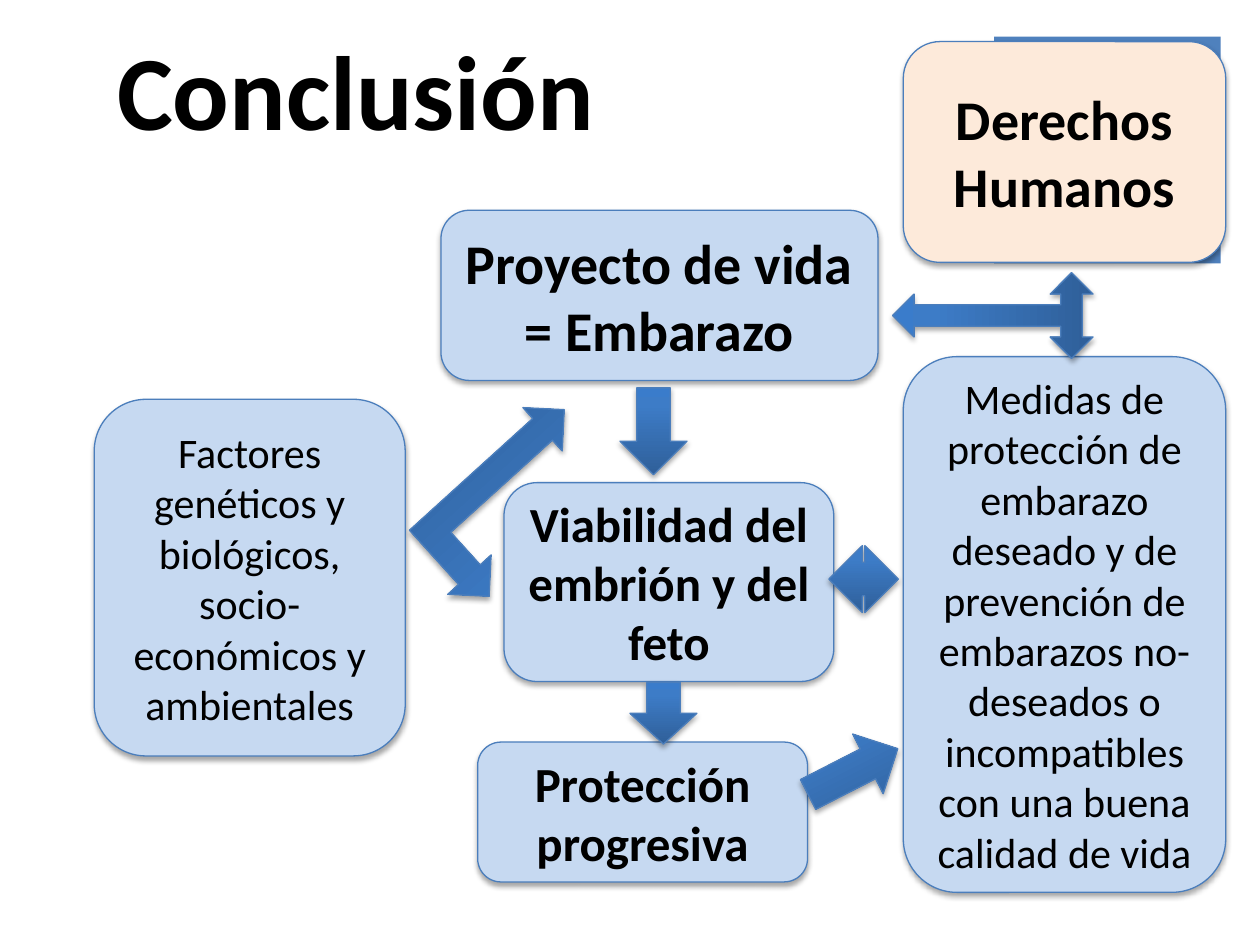
from copy import deepcopy

from lxml.etree import SubElement
from pptx import Presentation
from pptx.dml.color import RGBColor
from pptx.enum.shapes import MSO_SHAPE
from pptx.enum.text import MSO_ANCHOR, MSO_AUTO_SIZE, PP_ALIGN
from pptx.oxml.ns import qn
from pptx.util import Cm, Pt

COLORS = {
    "accent": "4F81BD",
    "outline": "4B7EBC",
    "topic": "C6D9F1",
    "rights": "FDEADA",
    "text": "000000",
}
ARROW_GRADIENT = [(0, "2F5F99"), (0.8, "3D7CC7"), (1, "3A7CCB")]


def rgb(name):
    return RGBColor.from_string(COLORS[name])


class ConclusionSlide:
    font_name = "Calibri"

    def __init__(self, presentation):
        self.slide = presentation.slides.add_slide(presentation.slide_layouts[5])

    def format_text(self, frame, text, size, bold, align):
        frame.text = text
        frame.word_wrap = True
        frame.auto_size = MSO_AUTO_SIZE.NONE
        frame.vertical_anchor = MSO_ANCHOR.MIDDLE
        paragraph = frame.paragraphs[0]
        paragraph.alignment = align
        font = paragraph.font
        font.name, font.size, font.bold = self.font_name, Pt(size), bold
        font.color.rgb = rgb("text")

    def title(self, text, left, top, width, height, size):
        title = self.slide.shapes.title
        title.left, title.top = Cm(left), Cm(top)
        title.width, title.height = Cm(width), Cm(height)
        self.format_text(title.text_frame, text, size, True, PP_ALIGN.LEFT)

    def shape(self, preset, left, top, width, height):
        shape = self.slide.shapes.add_shape(
            preset, Cm(left), Cm(top), Cm(width), Cm(height))
        shape.shadow.inherit = False
        return shape

    def corner_square(self, left, top, side):
        square = self.shape(MSO_SHAPE.RECTANGLE, left, top, side, side)
        square.fill.solid()
        square.fill.fore_color.rgb = rgb("accent")
        square.line.fill.background()

    def outline_and_shadow(self, shape):
        shape.line.color.rgb = rgb("outline")
        shape.line.width = Pt(0.75)
        effects = shape.element.spPr.find(qn("a:effectLst"))
        shadow = SubElement(effects, qn("a:outerShdw"), blurRad=str(Pt(3.1)),
                            dist=str(Pt(1.8)), dir="5400000", rotWithShape="0")
        color = SubElement(shadow, qn("a:srgbClr"), val=COLORS["text"])
        SubElement(color, qn("a:alpha"), val="35000")

    def box(self, text, left, top, width, height, size, bold=True, fill="topic"):
        box = self.shape(MSO_SHAPE.ROUNDED_RECTANGLE, left, top, width, height)
        box.fill.solid()
        box.fill.fore_color.rgb = rgb(fill)
        self.outline_and_shadow(box)
        self.format_text(box.text_frame, text, size, bold, PP_ALIGN.CENTER)

    def arrow(self, preset, left, top, width, height, rotation=0):
        arrow = self.shape(preset, left, top, width, height)
        arrow.rotation = rotation
        arrow.fill.gradient()
        arrow.fill.gradient_angle = 90
        stop_list = arrow.element.spPr.find(qn("a:gradFill")).find(qn("a:gsLst"))
        stop_list.append(deepcopy(stop_list[-1]))
        for stop, (position, color) in zip(arrow.fill.gradient_stops, ARROW_GRADIENT):
            stop.position = position
            stop.color.rgb = RGBColor.from_string(color)
        self.outline_and_shadow(arrow)


def main():
    presentation = Presentation()
    presentation.slide_width, presentation.slide_height = Cm(25.4), Cm(19.05)
    page = ConclusionSlide(presentation)

    page.corner_square(20.04, 0.74, 4.57)
    page.title("Conclusión", 2.11, 0.71, 18.85, 2.13, 60.3)

    page.box("Proyecto de vida = Embarazo", 8.89, 4.24, 8.81, 3.43, 32)
    page.box("Factores genéticos y biológicos, socio-económicos y ambientales",
             1.9, 8.05, 6.27, 7.19, 24, bold=False)
    page.box("Viabilidad del embrión y del feto", 10.16, 9.73, 6.65, 4.01, 28)
    page.box("Medidas de protección de embarazo deseado y de prevención de "
             "embarazos no-deseados o incompatibles con una buena calidad de vida",
             18.21, 7.19, 6.5, 10.8, 24, bold=False)
    page.box("Protección progresiva", 9.63, 14.96, 6.65, 2.82, 28)

    page.arrow(MSO_SHAPE.DOWN_ARROW, 12.5, 7.82, 1.35, 1.75)
    page.arrow(MSO_SHAPE.DOWN_ARROW, 12.7, 13.76, 1.35, 1.24)
    page.arrow(MSO_SHAPE.LEFT_UP_ARROW, 8.08, 8.94, 4.24, 2.36, 137.8)
    page.arrow(MSO_SHAPE.RIGHT_ARROW, 16.18, 14.88, 2.03, 1.35, 332.9)
    page.arrow(MSO_SHAPE.LEFT_RIGHT_ARROW, 16.71, 11, 1.4, 1.35)

    page.box("Derechos Humanos", 18.21, 0.84, 6.5, 4.45, 32, fill="rights")
    page.arrow(MSO_SHAPE.LEFT_RIGHT_UP_ARROW, 19.15, 4.34, 1.73, 4.04, 270)

    presentation.save("out.pptx")


if __name__ == "__main__":
    main()
